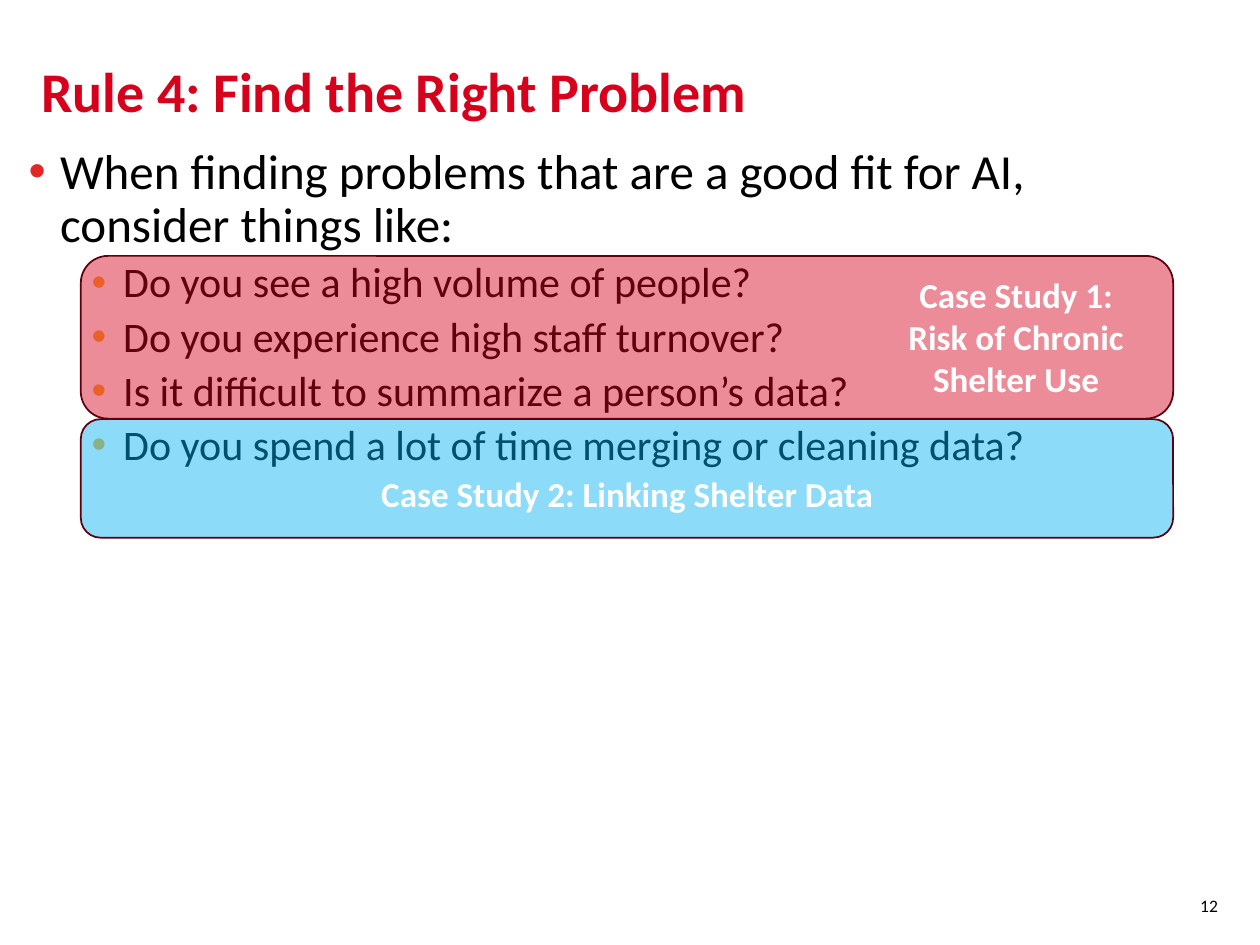
from dataclasses import dataclass
from typing import Any

from lxml import etree
from pptx import Presentation
from pptx import util as u
from pptx.dml.color import RGBColor
from pptx.enum import shapes, text
from pptx.oxml import ns


@dataclass(frozen=True)
class Theme:
    font: str = "Calibri"
    red: str = "D6001C"
    blue: str = "00B0F0"
    outline: str = "5E000C"
    black: str = "000000"
    white: str = "FFFFFF"
    main_bullet: str = "E32726"
    sub_bullet: str = "FBB031"
    title_size: int = 32
    main_size: int = 28
    sub_size: int = 24
    label_size: int = 20
    number_size: int = 10
    band_opacity: int = 45


THEME = Theme()


@dataclass(frozen=True)
class Area:
    left: float
    top: float
    width: float
    height: float

    def lengths(self) -> list[u.Length]:
        return [u.Cm(value) for value in (self.left, self.top, self.width, self.height)]


@dataclass(frozen=True)
class Line:
    words: str
    size: int
    color: str = THEME.black
    bold: bool = False
    level: int = 0
    bullet: str = ""


@dataclass(frozen=True)
class CaseStudy:
    band: Area
    color: str
    label: Area
    lines: tuple[str, ...]


def apply_format(target: Any, values: dict[str, Any]) -> None:
    for name, value in values.items():
        setattr(target, name, value)


def add_bullet(paragraph: Any, line: Line) -> None:
    properties = paragraph._p.get_or_add_pPr()
    properties.set("marL", str(u.Cm(0.635 + 1.27 * line.level)))
    properties.set("indent", str(u.Cm(-0.635)))
    color = etree.SubElement(properties, ns.qn("a:buClr"))
    etree.SubElement(color, ns.qn("a:srgbClr"), val=line.bullet)
    etree.SubElement(properties, ns.qn("a:buFont"), typeface="Arial")
    etree.SubElement(properties, ns.qn("a:buChar"), char="•")


def add_text(slide: Any, area: Area, lines: list[Line],
             frame_format: dict[str, Any], paragraph_format: dict[str, Any],
             space_before: int = 0) -> None:
    frame = slide.shapes.add_textbox(*area.lengths()).text_frame
    apply_format(frame, {"word_wrap": True, **frame_format})
    for index, line in enumerate(lines):
        paragraph = frame.add_paragraph() if index else frame.paragraphs[0]
        apply_format(paragraph, {"level": line.level, **paragraph_format})
        if index and space_before:
            paragraph.space_before = u.Pt(space_before)
        if line.bullet:
            add_bullet(paragraph, line)
        run = paragraph.add_run()
        run.text = line.words
        apply_format(run.font, {"name": THEME.font, "size": u.Pt(line.size), "bold": line.bold})
        run.font.color.rgb = RGBColor.from_string(line.color)


def add_band(slide: Any, area: Area, color: str) -> None:
    shape = slide.shapes.add_shape(shapes.MSO_SHAPE.ROUNDED_RECTANGLE, *area.lengths())
    shape.shadow.inherit = False
    shape.fill.solid()
    shape.fill.fore_color.rgb = RGBColor.from_string(color)
    fill_color = shape._element.spPr.find(ns.qn("a:solidFill")).find(ns.qn("a:srgbClr"))
    etree.SubElement(fill_color, ns.qn("a:alpha"), val=str(THEME.band_opacity * 1000))
    shape.line.width = u.Pt(1)
    shape.line.color.rgb = RGBColor.from_string(THEME.outline)


QUESTIONS = (
    "Do you see a high volume of people?",
    "Do you experience high staff turnover?",
    "Is it difficult to summarize a person’s data?",
    "Do you spend a lot of time merging or cleaning data?",
)

CASE_STUDIES = (
    CaseStudy(Area(1.63, 5.16, 22.02, 3.28), THEME.red, Area(17.6, 5.38, 5.77, 2.82),
              ("Case Study 1:", "Risk of Chronic", "Shelter Use")),
    CaseStudy(Area(1.63, 8.45, 22.02, 2.39), THEME.blue, Area(6.12, 9.4, 13.06, 1.12),
              ("Case Study 2: Linking Shelter Data",)),
)


def main() -> None:
    presentation = Presentation()
    apply_format(presentation, {"slide_width": u.Cm(25.4), "slide_height": u.Cm(19.05)})
    slide = presentation.slides.add_slide(presentation.slide_layouts[6])

    add_text(slide, Area(0.58, 0.53, 20.42, 2.74),
             [Line("Rule 4: Find the Right Problem", THEME.title_size, THEME.red, True)],
             {"vertical_anchor": text.MSO_ANCHOR.MIDDLE}, {"line_spacing": u.Pt(34)})
    add_text(slide, Area(19.08, 17.91, 5.72, 0.69), [Line("12", THEME.number_size)],
             {}, {"alignment": text.PP_ALIGN.RIGHT})

    introduction = Line("When finding problems that are a good fit for AI, consider things like:",
                        THEME.main_size, bullet=THEME.main_bullet)
    questions = [Line(words, THEME.sub_size, level=1, bullet=THEME.sub_bullet)
                 for words in QUESTIONS]
    add_text(slide, Area(0.33, 2.84, 23.04, 13.44), [introduction, *questions],
             {}, {"line_spacing": 0.9}, space_before=5)

    for study in CASE_STUDIES:
        add_band(slide, study.band, study.color)
    for study in CASE_STUDIES:
        add_text(slide, study.label,
                 [Line(words, THEME.label_size, THEME.white, True) for words in study.lines],
                 {"auto_size": text.MSO_AUTO_SIZE.SHAPE_TO_FIT_TEXT},
                 {"alignment": text.PP_ALIGN.CENTER})

    presentation.save("out.pptx")


if __name__ == "__main__":
    main()
